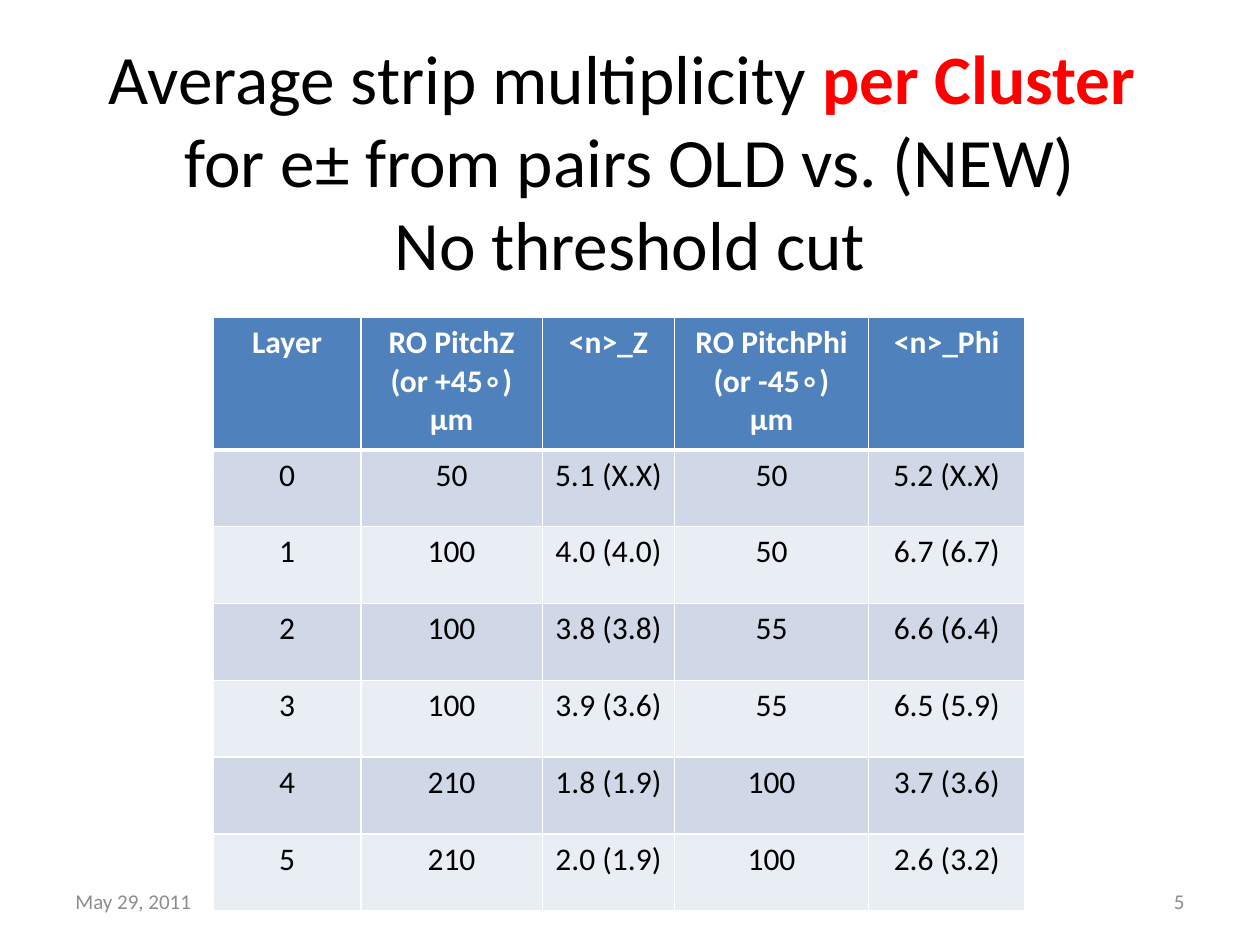
from lxml import etree
from pptx import Presentation
from pptx.dml.color import RGBColor
from pptx.enum.text import MSO_ANCHOR, PP_ALIGN
from pptx.oxml.ns import qn
from pptx.util import Pt

LEFT, CENTER, RIGHT = PP_ALIGN.LEFT, PP_ALIGN.CENTER, PP_ALIGN.RIGHT
MIDDLE = MSO_ANCHOR.MIDDLE

BLACK = RGBColor(0x00, 0x00, 0x00)
WHITE = RGBColor(0xFF, 0xFF, 0xFF)
RED = RGBColor(0xFF, 0x00, 0x00)
GRAY = RGBColor(0x8C, 0x8C, 0x8C)
BLUE = RGBColor(0x4F, 0x81, 0xBD)
BANDS = (RGBColor(0xE9, 0xED, 0xF4), RGBColor(0xD0, 0xD8, 0xE8))

COLUMN_WIDTHS = (84.2, 103.7, 75.6, 110.9, 89.3)
HEADER_HEIGHT, ROW_HEIGHT = 75.6, 43.9
ROWS = (
    ("Layer", "RO PitchZ\n(or +45∘)\nμm", "<n>_Z",
     "RO PitchPhi\n(or -45∘)\nμm", "<n>_Phi"),
    ("0", "50", "5.1 (X.X)", "50", "5.2 (X.X)"),
    ("1", "100", "4.0 (4.0)", "50", "6.7 (6.7)"),
    ("2", "100", "3.8 (3.8)", "55", "6.6 (6.4)"),
    ("3", "100", "3.9 (3.6)", "55", "6.5 (5.9)"),
    ("4", "210", "1.8 (1.9)", "100", "3.7 (3.6)"),
    ("5", "210", "2.0 (1.9)", "100", "2.6 (3.2)"),
)


class SlideBuilder:
    def __init__(self, page, font_name="Calibri"):
        self.page = page
        self.font_name = font_name

    def style(self, paragraph, size, color, align, bold=False):
        paragraph.alignment = align
        font = paragraph.font
        font.name, font.size, font.bold = self.font_name, Pt(size), bold
        font.color.rgb = color

    def text(self, left, top, width, height, lines, size, color, align):
        """Add one paragraph; each line is a list of (text, accent color) spans."""
        box = self.page.shapes.add_textbox(Pt(left), Pt(top), Pt(width), Pt(height))
        frame = box.text_frame
        frame.word_wrap = True
        frame.vertical_anchor = MIDDLE
        paragraph = frame.paragraphs[0]
        for index, line in enumerate(lines):
            if index:
                paragraph.add_line_break()
            for words, accent in line:
                span = paragraph.add_run()
                span.text = words
                if accent is not None:
                    span.font.color.rgb = accent
                    span.font.bold = True
        self.style(paragraph, size, color, align)

    def border(self, cell, side, width):
        properties = cell._tc.get_or_add_tcPr()
        line = etree.SubElement(properties, qn(f"a:ln{side}"), w=str(Pt(width)))
        fill = etree.SubElement(line, qn("a:solidFill"))
        etree.SubElement(fill, qn("a:srgbClr"), val=str(WHITE))

    def table(self, left, top, rows, widths, header_height, row_height, size):
        height = header_height + row_height * (len(rows) - 1)
        table = self.page.shapes.add_table(
            len(rows), len(widths), Pt(left), Pt(top), Pt(sum(widths)), Pt(height)).table
        for column, width in zip(table.columns, widths):
            column.width = Pt(width)
        for number, (row, values) in enumerate(zip(table.rows, rows)):
            header = number == 0
            row.height = Pt(header_height if header else row_height)
            for cell, value in zip(row.cells, values):
                for side in "LRTB":
                    heavy = (side == "B" and header) or (side == "T" and number == 1)
                    self.border(cell, side, 3 if heavy else 1)
                cell.fill.solid()
                cell.fill.fore_color.rgb = BLUE if header else BANDS[number % 2]
                cell.text = value
                for paragraph in cell.text_frame.paragraphs:
                    self.style(paragraph, size, WHITE if header else BLACK, CENTER, header)


def main():
    deck = Presentation()
    deck.slide_width, deck.slide_height = Pt(720), Pt(540)
    slide = SlideBuilder(deck.slides.add_slide(deck.slide_layouts[6]))

    # Title
    title = (
        [("Average strip multiplicity ", None), ("per Cluster ", RED)],
        [("for e± from pairs OLD vs. (NEW)", None)],
        [("No threshold cut", None)],
    )
    slide.text(36, 24, 648, 134.6, title, 39.6, BLACK, CENTER)

    # Footer: date and page number
    slide.text(36, 500.5, 168, 28.8, [[("May 29, 2011", None)]], 12, GRAY, LEFT)
    slide.text(516, 500.5, 168, 28.8, [[("5", None)]], 12, GRAY, RIGHT)

    # Multiplicity table
    slide.table(122, 181.5, ROWS, COLUMN_WIDTHS, HEADER_HEIGHT, ROW_HEIGHT, 18)

    deck.save("out.pptx")


if __name__ == "__main__":
    main()
